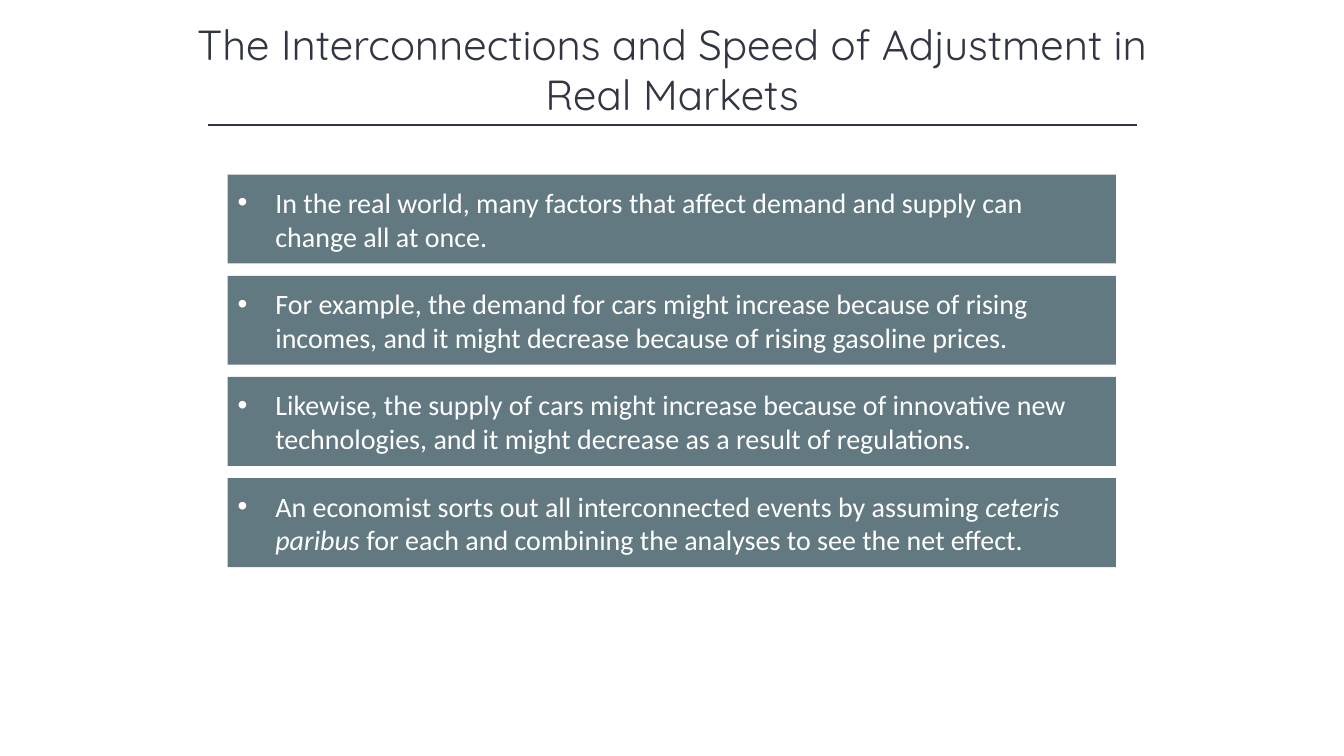
from lxml import etree
from pptx import Presentation
from pptx import util as u
from pptx.dml.color import RGBColor
from pptx.enum import shapes, text
from pptx.oxml.ns import qn

COLOURS = {"ink": "323542", "bar": "627981", "paper": "FFFFFF"}
TITLE = "The Interconnections and Speed of Adjustment in Real Markets"
POINTS = [
    [("In the real world, many factors that affect demand and supply can change all at once.", False)],
    [("For example, the demand for cars might increase because of rising incomes, "
      "and it might decrease because of rising gasoline prices.", False)],
    [("Likewise, the supply of cars might increase because of innovative new technologies, "
      "and it might decrease as a result of regulations.", False)],
    [("An economist sorts out all interconnected events by assuming ", False),
     ("ceteris paribus ", True),
     ("for each and combining the analyses to see the net effect.", False)],
]
BAR_TOP, BAR_PITCH = 4.4, 2.55


class SlideBuilder:
    """Hold the style and the current slide, and add each kind of element."""

    def __init__(self, presentation):
        self.slide = presentation.slides.add_slide(presentation.slide_layouts[5])
        self.title_font, self.body_font = "Quicksand", "Calibri"

    def colour(self, name):
        return RGBColor.from_string(COLOURS[name])

    def background(self, name):
        fill = self.slide.background.fill
        fill.solid()
        fill.fore_color.rgb = self.colour(name)

    def run(self, paragraph, words, font_name, size, colour, italic=False):
        run = paragraph.add_run()
        run.text = words
        run.font.name, run.font.size = font_name, u.Pt(size)
        run.font.italic = italic
        run.font.color.rgb = self.colour(colour)

    def title(self, words, left, top, width, height):
        shape = self.slide.shapes.title
        shape.left, shape.top = u.Cm(left), u.Cm(top)
        shape.width, shape.height = u.Cm(width), u.Cm(height)
        frame = shape.text_frame
        frame.word_wrap = True
        frame.auto_size = text.MSO_AUTO_SIZE.NONE
        frame.vertical_anchor = text.MSO_ANCHOR.TOP
        paragraph = frame.paragraphs[0]
        paragraph.alignment = text.PP_ALIGN.CENTER
        self.run(paragraph, words, self.title_font, 30, "ink")

    def rule(self, left, right, top):
        line = self.slide.shapes.add_connector(
            shapes.MSO_CONNECTOR.STRAIGHT, u.Cm(left), u.Cm(top), u.Cm(right), u.Cm(top))
        line.line.color.rgb = self.colour("ink")
        line.line.width = u.Pt(1)
        etree.SubElement(line._element.spPr, qn("a:effectLst"))

    def bullet(self, paragraph, indent):
        properties = paragraph._p.get_or_add_pPr()
        properties.set("marL", str(u.Cm(indent)))
        properties.set("indent", str(-u.Cm(indent)))
        etree.SubElement(properties, qn("a:buFont"), typeface="Arial")
        etree.SubElement(properties, qn("a:buChar"), char="•")

    def bar(self, pieces, left, top, width, height):
        shape = self.slide.shapes.add_shape(
            shapes.MSO_SHAPE.RECTANGLE, u.Cm(left), u.Cm(top), u.Cm(width), u.Cm(height))
        shape.shadow.inherit = False
        shape.fill.solid()
        shape.fill.fore_color.rgb = self.colour("bar")
        shape.line.fill.background()
        frame = shape.text_frame
        frame.word_wrap = True
        frame.vertical_anchor = text.MSO_ANCHOR.MIDDLE
        frame.margin_right = u.Cm(0.94)
        paragraph = frame.paragraphs[0]
        paragraph.alignment = text.PP_ALIGN.LEFT
        self.bullet(paragraph, 0.95)
        for words, italic in pieces:
            self.run(paragraph, words, self.body_font, 20, "paper", italic)


def main():
    presentation = Presentation()
    presentation.slide_width, presentation.slide_height = u.Cm(33.87), u.Cm(19.05)
    builder = SlideBuilder(presentation)
    builder.background("paper")
    builder.title(TITLE, 4.24, 0.33, 25.4, 2.82)
    builder.rule(5.23, 28.65, 3.15)
    for index, pieces in enumerate(POINTS):
        builder.bar(pieces, 5.74, BAR_TOP + index * BAR_PITCH, 22.38, 2.24)
    presentation.save("out.pptx")


if __name__ == "__main__":
    main()
